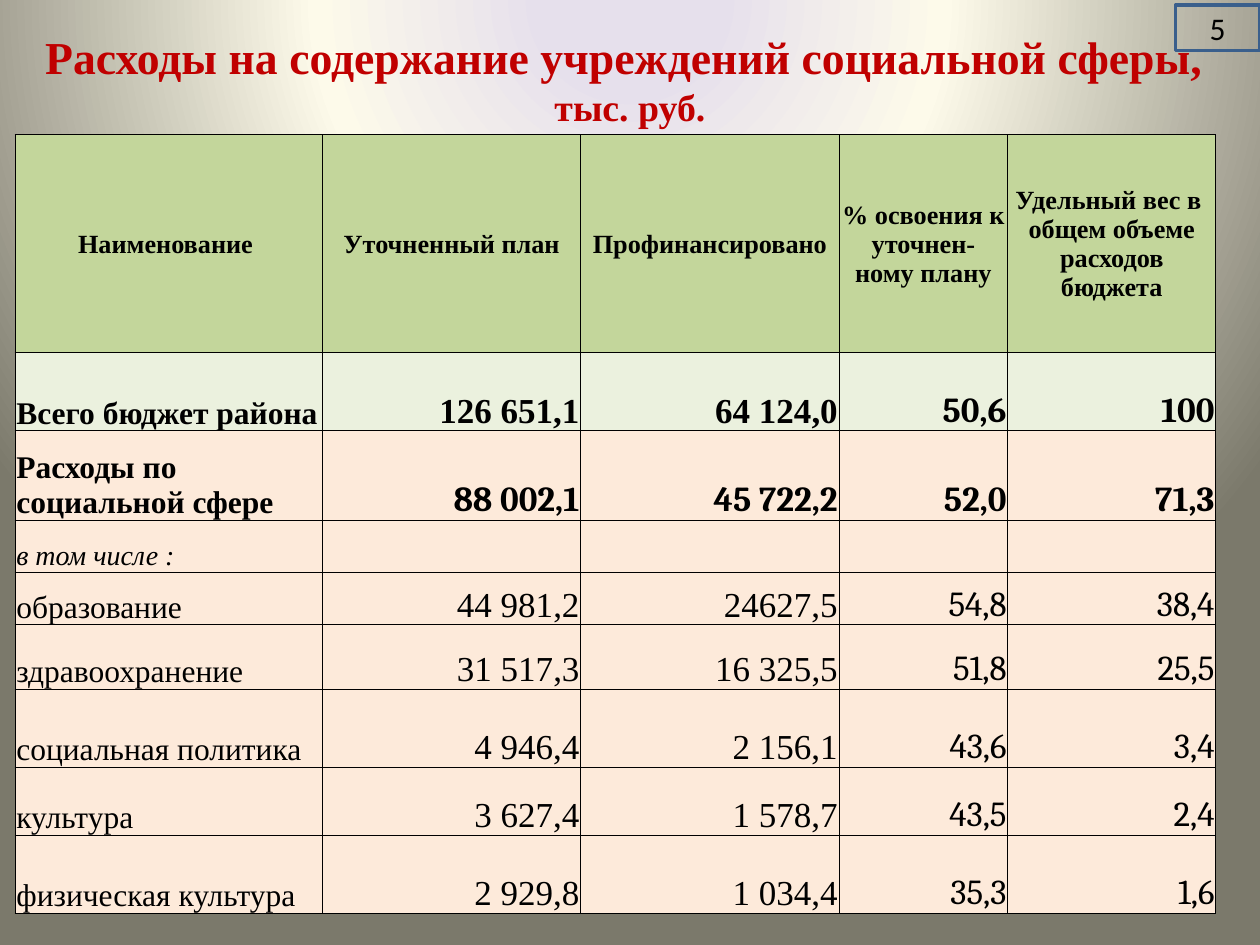
"""Build a slide with a table of social spending against the district budget."""
from lxml import etree
from pptx import Presentation
from pptx.dml.color import RGBColor
from pptx.enum.shapes import MSO_SHAPE
from pptx.enum.text import MSO_ANCHOR, PP_ALIGN
from pptx.oxml import parse_xml
from pptx.util import Inches, Pt

LEFT, MID, RIGHT, FULL = PP_ALIGN.LEFT, PP_ALIGN.CENTER, PP_ALIGN.RIGHT, PP_ALIGN.JUSTIFY
CENTER, BOTTOM = MSO_ANCHOR.MIDDLE, MSO_ANCHOR.BOTTOM
SERIF, ROMAN, SANS = "Times New Roman", "Cambria", "Calibri"
NS = "http://schemas.openxmlformats.org/drawingml/2006/main"
PNS = "http://schemas.openxmlformats.org/presentationml/2006/main"

COLORS = {"title": "C00000", "ink": "000000", "edge": "3A5F8C",
          "head": "C3D69B", "total": "EBF1DE", "body": "FDEADA"}
GLOW = [(11, "E6E0EC"), (40, "FDFAEA"), (100, "7B796B")]
TITLE = [("Расходы на содержание учреждений социальной сферы, ", 26.1),
         ("тыс. руб.", 21.6)]
PAGE = "5"
COLS = [2.44, 2.05, 2.05, 1.34, 1.65]
ROWS = [1.73, 0.62, 0.71, 0.41, 0.42, 0.51, 0.62, 0.54, 0.62]
DATA = [
    ("Наименование ", "Уточненный план", "Профинансировано",
     "% освоения к уточнен-\nному плану",
     "Удельный вес в  общем объеме расходов бюджета"),
    ("Всего бюджет района", "126 651,1", "64 124,0", "50,6", "100"),
    ("Расходы по социальной сфере", "88 002,1", "45 722,2", "52,0", "71,3"),
    ("в том числе :", "", "", "", ""),
    ("образование", "44 981,2", "24627,5", "54,8", "38,4"),
    ("здравоохранение", "31 517,3", "16 325,5", "51,8", "25,5"),
    ("социальная политика", "4 946,4", "2 156,1", "43,6", "3,4"),
    ("культура", "3 627,4", "1 578,7", "43,5", "2,4"),
    ("физическая культура", "2 929,8", "1 034,4", "35,3", "1,6"),
]
HEAD, TOTAL, SOCIAL, NOTE = range(4)


def color(key):
    return RGBColor.from_string(COLORS[key])


def style(para, align, size, face, bold=False, italic=False, ink="ink"):
    para.alignment = align
    font = para.font
    font.name, font.bold, font.italic = face, bold, italic
    font.color.rgb = color(ink)
    if size:
        font.size = Pt(size)


def paint(slide):
    stops = "".join(f'<a:gs pos="{pos * 1000}"><a:srgbClr val="{hue}"/></a:gs>'
                    for pos, hue in GLOW)
    slide.element.cSld.insert(0, parse_xml(
        f'<p:bg xmlns:p="{PNS}" xmlns:a="{NS}"><p:bgPr><a:gradFill>'
        f'<a:gsLst>{stops}</a:gsLst><a:path path="circle">'
        '<a:fillToRect l="50000" t="-80000" r="50000" b="180000"/></a:path>'
        '</a:gradFill><a:effectLst/></p:bgPr></p:bg>'))


def frame(cell):
    props = cell._tc.get_or_add_tcPr()
    for side in "LRTB":
        line = etree.SubElement(props, f"{{{NS}}}ln{side}", w=str(Pt(0.5)))
        fill = etree.SubElement(line, f"{{{NS}}}solidFill")
        etree.SubElement(fill, f"{{{NS}}}srgbClr", val=COLORS["ink"])


def look(row, col):
    if row == HEAD:
        return MID, 15, SERIF, True
    if col == 0:
        align = FULL if row > NOTE else LEFT
        return align, 16 if row == NOTE else 18, SERIF, row < NOTE, row == NOTE
    face = ROMAN if col > 2 or row == SOCIAL else SERIF
    return RIGHT, 20, face, row < NOTE


def add_title(slide):
    box = slide.shapes.add_textbox(0, Inches(0.13), Inches(10), Inches(0.94))
    text = box.text_frame
    text.word_wrap, text.vertical_anchor = True, BOTTOM
    para = text.paragraphs[0]
    style(para, MID, None, SERIF, True, ink="title")
    for i, (words, size) in enumerate(TITLE):
        if i:
            para.add_line_break()
        run = para.add_run()
        run.text, run.font.size = words, Pt(size)


def add_grid(slide):
    grid = slide.shapes.add_table(
        len(ROWS), len(COLS), Inches(0.12), Inches(1.07),
        Inches(sum(COLS)), Inches(sum(ROWS))).table
    grid.first_row = grid.horz_banding = False
    for part, sizes, name in ((grid.columns, COLS, "width"), (grid.rows, ROWS, "height")):
        for item, size in zip(part, sizes):
            setattr(item, name, Inches(size))
    for r, line in enumerate(DATA):
        for c, words in enumerate(line):
            cell = grid.cell(r, c)
            cell.text = words
            cell.margin_left = cell.margin_right = cell.margin_top = Inches(0.01)
            cell.margin_bottom = 0
            cell.vertical_anchor = CENTER if r == HEAD else BOTTOM
            frame(cell)
            cell.fill.solid()
            cell.fill.fore_color.rgb = color({HEAD: "head", TOTAL: "total"}.get(r, "body"))
            for para in cell.text_frame.paragraphs:
                style(para, *look(r, c))


def add_page(slide):
    box = slide.shapes.add_shape(MSO_SHAPE.RECTANGLE, Inches(9.33), Inches(0.04),
                                 Inches(0.67), Inches(0.36))
    box.shadow.inherit = False
    box.fill.background()
    box.line.color.rgb, box.line.width = color("edge"), Pt(2)
    box.text_frame.text, box.text_frame.vertical_anchor = PAGE, CENTER
    style(box.text_frame.paragraphs[0], MID, 18, SANS)


def main():
    deck = Presentation()
    deck.slide_width, deck.slide_height = Inches(10), Inches(7.5)
    slide = deck.slides.add_slide(deck.slide_layouts[6])
    paint(slide)
    add_title(slide)
    add_grid(slide)
    add_page(slide)
    deck.save("out.pptx")


if __name__ == "__main__":
    main()
